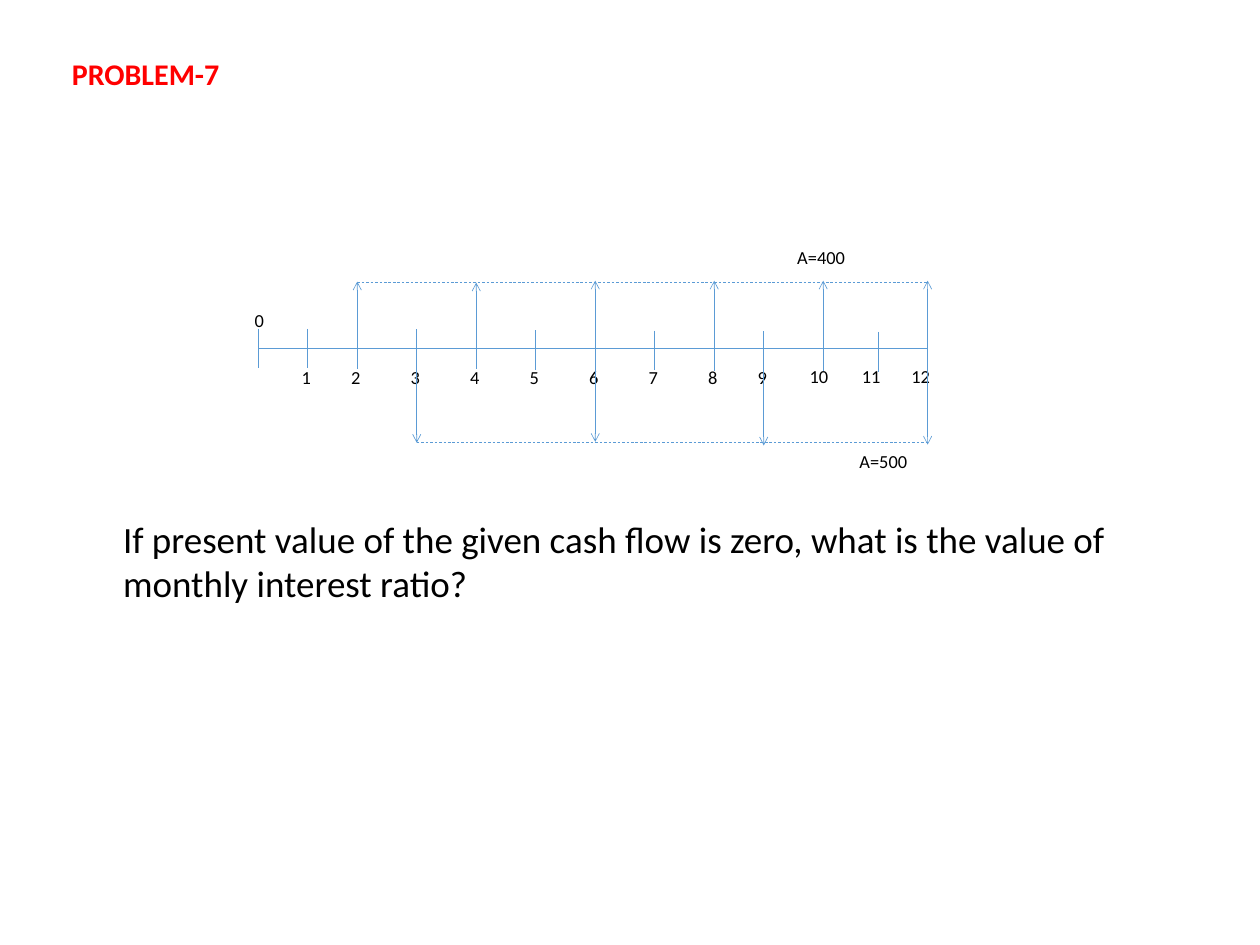
from itertools import accumulate

from lxml import etree
from pptx import Presentation
from pptx.dml.color import RGBColor
from pptx.enum.dml import MSO_LINE
from pptx.enum.shapes import MSO_CONNECTOR
from pptx.enum.text import MSO_AUTO_SIZE, PP_ALIGN
from pptx.oxml.ns import qn
from pptx.util import Pt

STRAIGHT = MSO_CONNECTOR.STRAIGHT
DASH = MSO_LINE.DASH
GROW = MSO_AUTO_SIZE.SHAPE_TO_FIT_TEXT
LEFT, JUSTIFY = PP_ALIGN.LEFT, PP_ALIGN.JUSTIFY

COLORS = {"line": "5B9BD5", "text": "000000", "title": "FF0000"}
FONT = "Calibri"
GAPS = [39.6] * 2 + [47.6] * 6 + [39.6, 47.6, 43.9, 39.6]
MONTHS = list(accumulate(GAPS, initial=206.6))
AXIS = 278.6
TICK = 31.7
UP, DOWN = 53.3, 75.6
INFLOWS = {2: 278.6, 4: 279.4, 6: 277.9, 8: 277.9, 10: 277.9, 12: 277.9}
OUTFLOWS = {3: 278.6, 6: 277.9, 9: 280.8, 12: 280.1}


def add_line(slide, x1, y1, x2, y2, dash=False, arrow=False):
    line = slide.shapes.add_connector(STRAIGHT, Pt(x1), Pt(y1), Pt(x2), Pt(y2))
    line.line.color.rgb = RGBColor.from_string(COLORS["line"])
    line.line.width = Pt(0.5)
    if dash:
        line.line.dash_style = DASH
    if arrow:
        etree.SubElement(line.line._get_or_add_ln(), qn("a:tailEnd"), type="arrow")
    etree.SubElement(line._element.spPr, qn("a:effectLst"))


def add_text(slide, text, x, y, w, h, size=14.7, color="text", bold=False, align=LEFT):
    box = slide.shapes.add_textbox(Pt(x), Pt(y), Pt(w), Pt(h))
    frame = box.text_frame
    frame.word_wrap = True
    frame.auto_size = GROW
    para = frame.paragraphs[0]
    para.text = text
    para.alignment = align
    font = para.font
    font.name = FONT
    font.size = Pt(size)
    font.bold = bold
    font.color.rgb = RGBColor.from_string(COLORS[color])


def add_axis(slide):
    add_line(slide, MONTHS[0], AXIS, MONTHS[-1], AXIS)
    for month, x in enumerate(MONTHS):
        top = 262.8 + 0.25 * month
        add_line(slide, x, top, x, top + TICK)
        if month == 0:
            add_text(slide, "0", x - 10, 244.1, 23.8, 25.2)
        elif month < 10:
            add_text(slide, str(month), x - 12, 289.4, 23.8, 25.2)
        else:
            shift = 18 if month == 10 else 20.1
            add_text(slide, str(month), x - shift, 288.7, 39.6, 25.2)


def add_flows(slide, flows, length, level):
    add_line(slide, MONTHS[min(flows)], level, MONTHS[-1], level, dash=True)
    for month, start in flows.items():
        x = MONTHS[month]
        add_line(slide, x, start, x, start + length, arrow=True)


def main():
    prs = Presentation()
    prs.slide_width, prs.slide_height = Pt(1008), Pt(756)
    slide = prs.slides.add_slide(prs.slide_layouts[6])
    add_axis(slide)
    add_flows(slide, INFLOWS, -UP, 226.1)
    add_flows(slide, OUTFLOWS, DOWN, 353.5)
    add_text(slide, "A=400", 630.7, 193.7, 71.3, 25.2)
    add_text(slide, "A=500", 680.4, 356.4, 71.3, 25.2)
    add_text(
        slide,
        "If present value of the given cash flow is zero, "
        "what is the value of monthly interest ratio?",
        91.4, 409.7, 802.1, 79.2, size=29.6,
    )
    add_text(slide, "PROBLEM-7", 50.4, 41, 928.8, 94.3,
             size=24, color="title", bold=True, align=JUSTIFY)
    prs.save("out.pptx")


if __name__ == "__main__":
    main()
